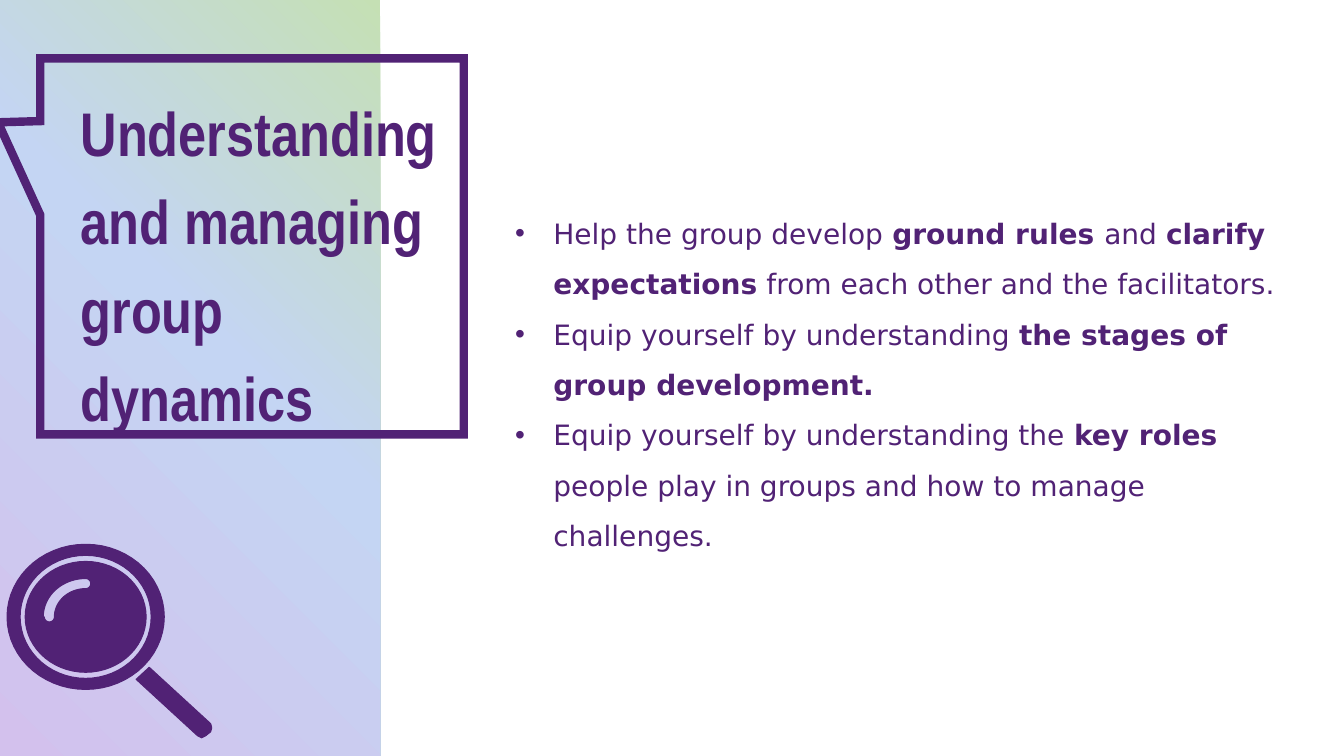
from math import cos, radians, sin

from lxml import etree
from pptx import Presentation
from pptx.dml.color import RGBColor
from pptx.enum.shapes import MSO_SHAPE
from pptx.enum.text import MSO_ANCHOR, MSO_AUTO_SIZE, PP_ALIGN
from pptx.oxml import parse_xml
from pptx.oxml.ns import nsdecls, qn
from pptx.util import Inches, Pt

RECTANGLE, CALLOUT = MSO_SHAPE.RECTANGLE, MSO_SHAPE.RECTANGULAR_CALLOUT
TOP, LEFT, GROW = MSO_ANCHOR.TOP, PP_ALIGN.LEFT, MSO_AUTO_SIZE.SHAPE_TO_FIT_TEXT
COLORS = {"purple": "512275", "lilac": "D3C1ED", "blue": "C4D5F3", "green": "C5E0B4"}
PURPLE = RGBColor.from_string(COLORS["purple"])
TITLE_FONT, BODY_FONT = "Arial Narrow", "DejaVu Sans"


def arc(cx, cy, rx, ry, start=0, end=360, steps=60):
    """Points on an ellipse from start to end, in degrees clockwise from the right."""
    angles = [radians(start + (end - start) * i / steps) for i in range(steps + 1)]
    return [(cx + rx * cos(a), cy + ry * sin(a)) for a in angles]


def style_run(run, font, size, bold):
    run.font.name, run.font.size, run.font.bold = font, Pt(size), bold
    run.font.color.rgb = PURPLE


prs = Presentation()
prs.slide_width, prs.slide_height = Inches(13.33), Inches(7.5)
slide = prs.slides.add_slide(prs.slide_layouts[5])
shapes = slide.shapes

# Side panel with a gradient spreading from the bottom left corner
panel = shapes.add_shape(RECTANGLE, 0, 0, Inches(3.77), prs.slide_height)
panel.shadow.inherit = False
panel.line.fill.background()
panel.fill.background()
stops = "".join(
    f'<a:gs pos="{share * 1000}"><a:srgbClr val="{COLORS[name]}"/></a:gs>'
    for share, name in ((0, "lilac"), (56, "blue"), (100, "green"))
)
gradient = parse_xml(
    f'<a:gradFill {nsdecls("a")} rotWithShape="1"><a:gsLst>{stops}</a:gsLst>'
    '<a:path path="circle"><a:fillToRect t="100000" r="100000"/></a:path></a:gradFill>'
)
panel_props = panel.element.spPr
panel_props.replace(panel_props.find(qn("a:noFill")), gradient)

# Title in a speech bubble
bubble = shapes.add_shape(CALLOUT, Inches(0.4), Inches(0.58), Inches(4.2), Inches(3.73))
bubble.shadow.inherit = False
bubble.adjustments[0], bubble.adjustments[1] = -0.6, -0.33
bubble.fill.background()
bubble.line.color.rgb, bubble.line.width = PURPLE, Pt(6)
etree.SubElement(bubble.line._get_or_add_ln(), qn("a:miter")).set("lim", "800000")

title = shapes.title
shapes._spTree.append(title.element)  # in front of the panel
title.left, title.top = Inches(0.51), Inches(0.74)
title.width, title.height = Inches(4.09), Inches(3.57)
title.text_frame.text = "Understanding and managing group dynamics"
title.text_frame.word_wrap = True
title.text_frame.auto_size = GROW
title.text_frame.vertical_anchor = TOP
heading = title.text_frame.paragraphs[0]
heading.alignment, heading.line_spacing = LEFT, 1.2
heading._p.get_or_add_pPr().set("marL", str(Inches(0.19)))
style_run(heading.runs[0], TITLE_FONT, 44, True)

# Magnifying glass: each part is a list of outlines in inches, the second one a hole
CX, CY = 0.85, 6.12
glint = (
    arc(CX, CY, 0.42, 0.38, 180, 270)
    + arc(CX, CY - 0.33, 0.05, 0.05, 270, 450)
    + arc(CX, CY, 0.31, 0.28, 270, 180)
    + arc(CX - 0.36, CY, 0.05, 0.05, 0, 180)
)
rim = [arc(CX, CY, 0.78, 0.72), arc(CX, CY, 0.65, 0.61)]
lens = [arc(CX, CY, 0.6, 0.55), glint]
handle = [[(1.48, 6.62), (1.35, 6.74), (1.96, 7.3), (2, 7.32), (2.04, 7.3),
           (2.09, 7.26), (2.1, 7.22), (2.09, 7.18)]]
for outlines in (rim, lens, handle):
    edge, *holes = [[(Inches(x), Inches(y)) for x, y in outline] for outline in outlines]
    builder = shapes.build_freeform(*edge[0])
    builder.add_line_segments(edge[1:], close=True)
    for hole in holes:
        builder.move_to(*hole[0])
        builder.add_line_segments(hole[1:], close=True)
    part = builder.convert_to_shape()
    part.shadow.inherit = False
    part.fill.solid()
    part.fill.fore_color.rgb = PURPLE
    part.line.color.rgb, part.line.width = PURPLE, Pt(0.75)

# Advice, as (text, bold) pieces
advice = [
    [("Help the group develop ", False), ("ground rules ", True), ("and ", False),
     ("clarify expectations", True),
     (" from each other and the facilitators.", False)],
    [("Equip yourself by understanding ", False),
     ("the stages of group development.", True)],
    [("Equip yourself by understanding the ", False), ("key roles ", True),
     ("people play in groups and how to manage challenges.", False)],
]
body = shapes.add_textbox(Inches(5.01), Inches(1.93), Inches(7.92), Inches(3.64)).text_frame
body.word_wrap = True
body.auto_size = GROW
for i, pieces in enumerate(advice):
    tip = body.add_paragraph() if i else body.paragraphs[0]
    tip.line_spacing = 1.5
    props = tip._p.get_or_add_pPr()
    props.set("marL", str(Inches(0.38)))
    props.set("indent", str(-Inches(0.38)))
    etree.SubElement(props, qn("a:buFont")).set("typeface", "Arial")
    etree.SubElement(props, qn("a:buChar")).set("char", "•")
    for text, bold in pieces:
        run = tip.add_run()
        run.text = text
        style_run(run, BODY_FONT, 20, bold)

prs.save("out.pptx")
